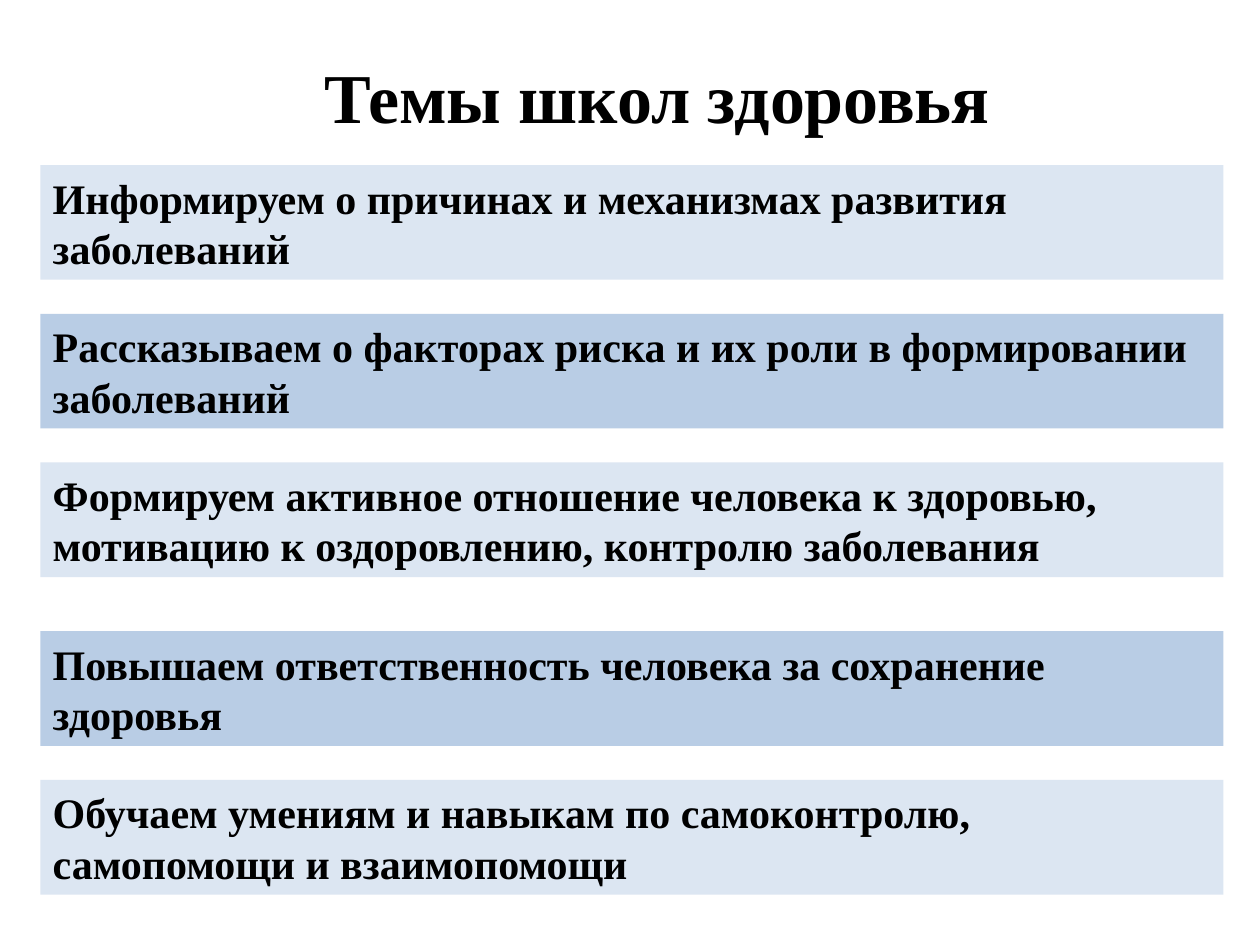
from dataclasses import dataclass

from pptx import Presentation, util as u
from pptx.dml.color import RGBColor
from pptx.enum import shapes, text

TITLE = "Темы школ здоровья"
GROUPS = [
    [
        "Информируем о причинах и механизмах развития заболеваний",
        "Рассказываем о факторах риска и их роли в формировании заболеваний",
        "Формируем активное отношение человека к здоровью, "
        "мотивацию к оздоровлению, контролю заболевания",
    ],
    [
        "Повышаем ответственность человека за сохранение здоровья",
        "Обучаем умениям и навыкам по самоконтролю, самопомощи и взаимопомощи",
    ],
]


@dataclass(frozen=True)
class Theme:
    font: str = "Times New Roman"
    ink: str = "000000"
    bands: tuple = ("DCE6F2", "B9CDE5")
    title_size: int = 40
    body_size: int = 24


THEME = Theme()
LEFT, TOP, WIDTH, HEIGHT = 0.32, 1.31, 9.39, 0.91
ROW_STEP, GROUP_GAP = 1.18, 0.16


def write(shape, words, size, align):
    tf = shape.text_frame
    tf.text = words
    tf.word_wrap = True
    tf.vertical_anchor = text.MSO_ANCHOR.MIDDLE
    p = tf.paragraphs[0]
    p.alignment = align
    font = p.runs[0].font
    font.name, font.size, font.bold = THEME.font, u.Pt(size), True
    font.color.rgb = RGBColor.from_string(THEME.ink)


def add_band(s, top, words, color):
    sp = s.shapes.add_shape(
        shapes.MSO_SHAPE.RECTANGLE,
        *(u.Inches(v) for v in (LEFT, top, WIDTH, HEIGHT)))
    sp.shadow.inherit = False
    sp.fill.solid()
    sp.fill.fore_color.rgb = RGBColor.from_string(color)
    sp.line.fill.background()
    write(sp, words, THEME.body_size, text.PP_ALIGN.LEFT)
    sp.text_frame.auto_size = text.MSO_AUTO_SIZE.SHAPE_TO_FIT_TEXT


def main():
    prs = Presentation()
    prs.slide_width, prs.slide_height = u.Inches(10), u.Inches(7.5)
    s = prs.slides.add_slide(prs.slide_layouts[5])

    title = s.shapes.title
    title.left, title.top = u.Inches(0.43), u.Inches(0.13)
    title.width, title.height = u.Inches(9.57), u.Inches(1.25)
    write(title, TITLE, THEME.title_size, text.PP_ALIGN.CENTER)

    rows = [(g, words) for g, group in enumerate(GROUPS) for words in group]
    for i, (g, words) in enumerate(rows):
        top = TOP + i * ROW_STEP + g * GROUP_GAP
        add_band(s, top, words, THEME.bands[i % len(THEME.bands)])

    prs.save("out.pptx")


if __name__ == "__main__":
    main()
